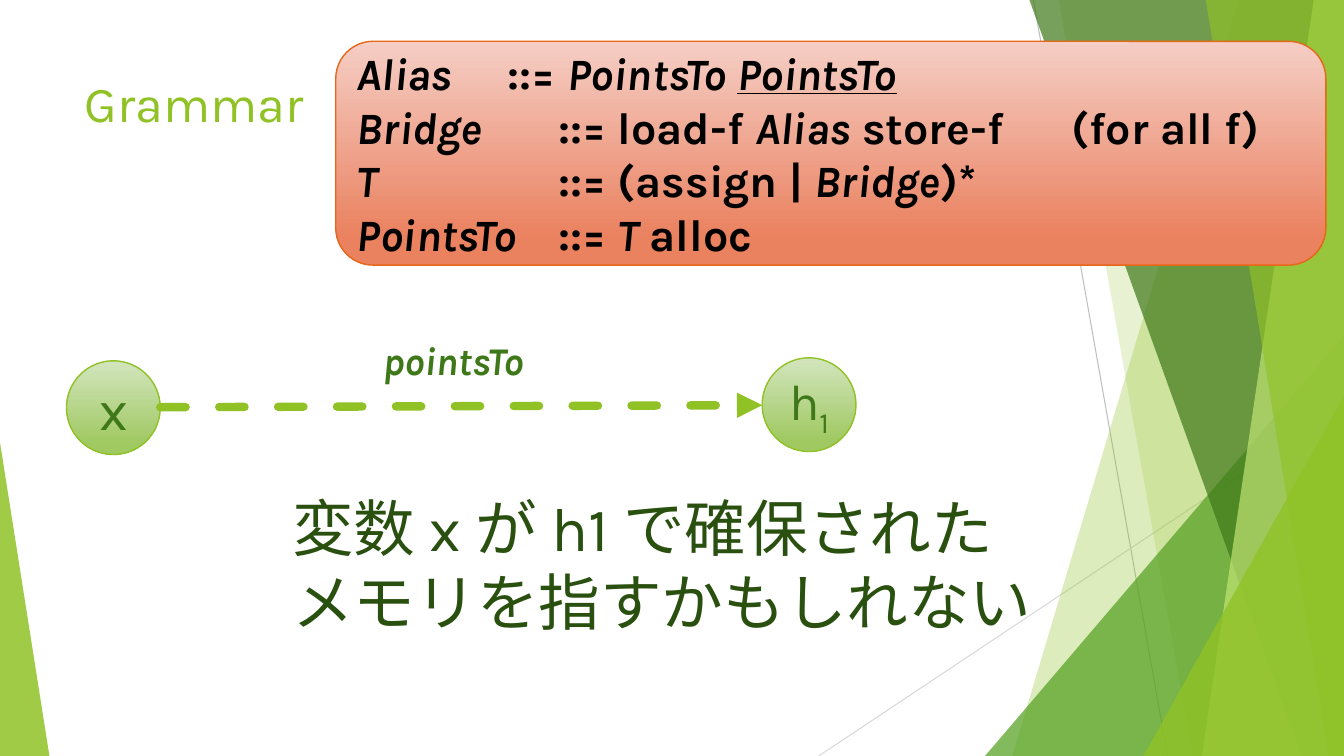
from lxml import etree
from pptx import Presentation
from pptx.dml.color import RGBColor
from pptx.enum.dml import MSO_LINE
from pptx.enum.shapes import MSO_CONNECTOR, MSO_SHAPE
from pptx.enum.text import MSO_ANCHOR, PP_ALIGN
from pptx.oxml.ns import qn
from pptx.util import Pt

PX = 9144
WIDTH, HEIGHT = 1333, 750
FONT = "Karla"
GREEN, DARK_GREEN, DEEP_GREEN = "90C226", "3F7819", "2A5010"
NODE_FILL = ("D3E5BE", "A0C962")
GRAMMAR_FILL = ("F5CEC5", "EA815F")

STRAIGHT = MSO_CONNECTOR.STRAIGHT
OVAL = MSO_SHAPE.OVAL
ROUNDED = MSO_SHAPE.ROUNDED_RECTANGLE
TRIANGLE = MSO_SHAPE.ISOSCELES_TRIANGLE
DASH = MSO_LINE.DASH
TOP, MIDDLE = MSO_ANCHOR.TOP, MSO_ANCHOR.MIDDLE
LEFT, CENTER = PP_ALIGN.LEFT, PP_ALIGN.CENTER


def px(*lengths):
    return [length * PX for length in lengths]


def rgb(color):
    return RGBColor.from_string(color)


def sub(parent, tag, **attrs):
    return etree.SubElement(parent, qn(tag), attrs)


def add_text(p, text, size, color, style=""):
    for i, line in enumerate(text.split("\n")):
        if i:
            p.add_line_break()
        r = p.add_run()
        r.text = line
        r.font.name = FONT
        r.font.size = Pt(size)
        r.font.color.rgb = rgb(color)
        r.font.bold = "b" in style
        r.font.italic = "i" in style
        r.font.underline = "u" in style
        if "s" in style:
            r.font._element.set("baseline", "-25000")


def add_tab_stops(p, *stops):
    tabs = sub(p._p.get_or_add_pPr(), "a:tabLst")
    for stop in stops:
        sub(tabs, "a:tab", pos=str(stop * PX), algn="l")


def add_line(s, start, end, color, width):
    line = s.shapes.add_connector(STRAIGHT, *px(*start, *end))
    line.line.color.rgb = rgb(color)
    line.line.width = Pt(width)
    sub(line._element.spPr, "a:effectLst")
    return line


def add_dashed_arrow(s, start, end, color, width):
    line = add_line(s, start, end, color, width)
    line.line.dash_style = DASH
    ln = line.line._get_or_add_ln()
    ln.set("cap", "rnd")
    sub(ln, "a:tailEnd", type="triangle")


def fill_clear(sp, color, opacity):
    sp.shadow.inherit = False
    sp.line.fill.background()
    sp.fill.solid()
    sp.fill.fore_color.rgb = rgb(color)
    clr = sp._element.spPr.find(qn("a:solidFill"))[0]
    sub(clr, "a:alpha", val=str(opacity * 1000))


def add_facet(s, top_left, bottom_left, color, opacity):
    builder = s.shapes.build_freeform(top_left, 0, scale=PX)
    builder.add_line_segments(
        [(WIDTH, 0), (WIDTH, HEIGHT), (bottom_left, HEIGHT)], close=True)
    fill_clear(builder.convert_to_shape(), color, opacity)


def add_corner(s, left, top, width, peak, color, opacity):
    sp = s.shapes.add_shape(TRIANGLE, *px(left, top, width, HEIGHT - top))
    sp.adjustments[0] = peak
    fill_clear(sp, color, opacity)


def add_gradient_shape(s, kind, box, colors, outline):
    sp = s.shapes.add_shape(kind, *px(*box))
    sp.shadow.inherit = False
    sp.fill.gradient()
    sp.fill.gradient_angle = 270
    for stop, color, position in zip(sp.fill.gradient_stops, colors, (0, 0.88)):
        stop.color.rgb = rgb(color)
        stop.position = position
    sp.line.color.rgb = rgb(outline)
    sp.line.width = Pt(1)
    sp.text_frame.word_wrap = True
    sp.text_frame.vertical_anchor = MIDDLE
    return sp


def add_node(s, left, top, size, name, index=""):
    sp = add_gradient_shape(s, OVAL, (left, top, 93, 93), NODE_FILL, GREEN)
    p = sp.text_frame.paragraphs[0]
    p.alignment = CENTER
    add_text(p, name, size, DARK_GREEN)
    if index:
        add_text(p, index, size, DARK_GREEN, "s")


def add_label(s, box, text, size, color, style=""):
    tf = s.shapes.add_textbox(*px(*box)).text_frame
    tf.word_wrap = True
    add_text(tf.paragraphs[0], text, size, color, style)


def add_grammar(s, box, rules):
    tf = add_gradient_shape(s, ROUNDED, box, GRAMMAR_FILL, "E76618").text_frame
    for i, (stops, runs) in enumerate(rules):
        p = tf.add_paragraph() if i else tf.paragraphs[0]
        p.alignment = LEFT
        add_tab_stops(p, *stops)
        for text, style in runs:
            add_text(p, text, 32, "000000", "b" + style)


def add_backdrop(s):
    add_line(s, (1025, 0), (1158, HEIGHT), "BFBFBF", 0.75)
    add_line(s, (WIDTH, 403), (812, HEIGHT), "D9D9D9", 0.75)
    add_facet(s, 1228, 1004, GREEN, 30)
    add_facet(s, 1050, 1183, GREEN, 20)
    add_corner(s, 977, 333, 356, 1, "54A021", 72)
    add_facet(s, 1021, 1291, DARK_GREEN, 70)
    add_facet(s, 1303, 1192, "C0E474", 70)
    add_facet(s, 1196, 1318, GREEN, 65)
    add_corner(s, 1134, 393, 199, 1, GREEN, 80)
    add_corner(s, 0, 439, 49, 0, GREEN, 85)


def set_title(s, box, text):
    title = s.shapes.title
    title.left, title.top, title.width, title.height = px(*box)
    title.text_frame.vertical_anchor = TOP
    p = title.text_frame.paragraphs[0]
    p.alignment = LEFT
    add_text(p, text, 36, GREEN)


def main():
    prs = Presentation()
    prs.slide_width, prs.slide_height = px(WIDTH, HEIGHT)
    s = prs.slides.add_slide(prs.slide_layouts[5])
    add_backdrop(s)
    set_title(s, (74, 67, 940, 144), "Grammar")
    add_node(s, 66, 358, 40, "x")
    add_node(s, 756, 355, 36, "h", "1")
    add_dashed_arrow(s, (159, 404), (756, 402), GREEN, 6)
    add_label(s, (370, 329, 202, 57), "pointsTo", 28, DARK_GREEN, "bi")
    add_label(s, (280, 481, 807, 158),
              "変数 x が h1 で確保された\nメモリを指すかもしれない", 44, DEEP_GREEN)
    add_grammar(s, (333, 41, 982, 222), [
        ([150], [("Alias", "i"), ("\t::= ", ""), ("PointsTo ", "i"),
                 ("PointsTo", "iu")]),
        ([200, 709], [("Bridge", "i"), ("\t::= load-f ", ""), ("Alias", "i"),
                      (" store-f\t(for all f)", "")]),
        ([200], [("T", "i"), ("\t::= (assign | ", ""), ("Bridge", "i"),
                 (")*", "")]),
        ([200], [("PointsTo", "i"), ("\t::= ", ""), ("T ", "i"),
                 ("alloc", "")]),
    ])
    prs.save("out.pptx")


if __name__ == "__main__":
    main()
